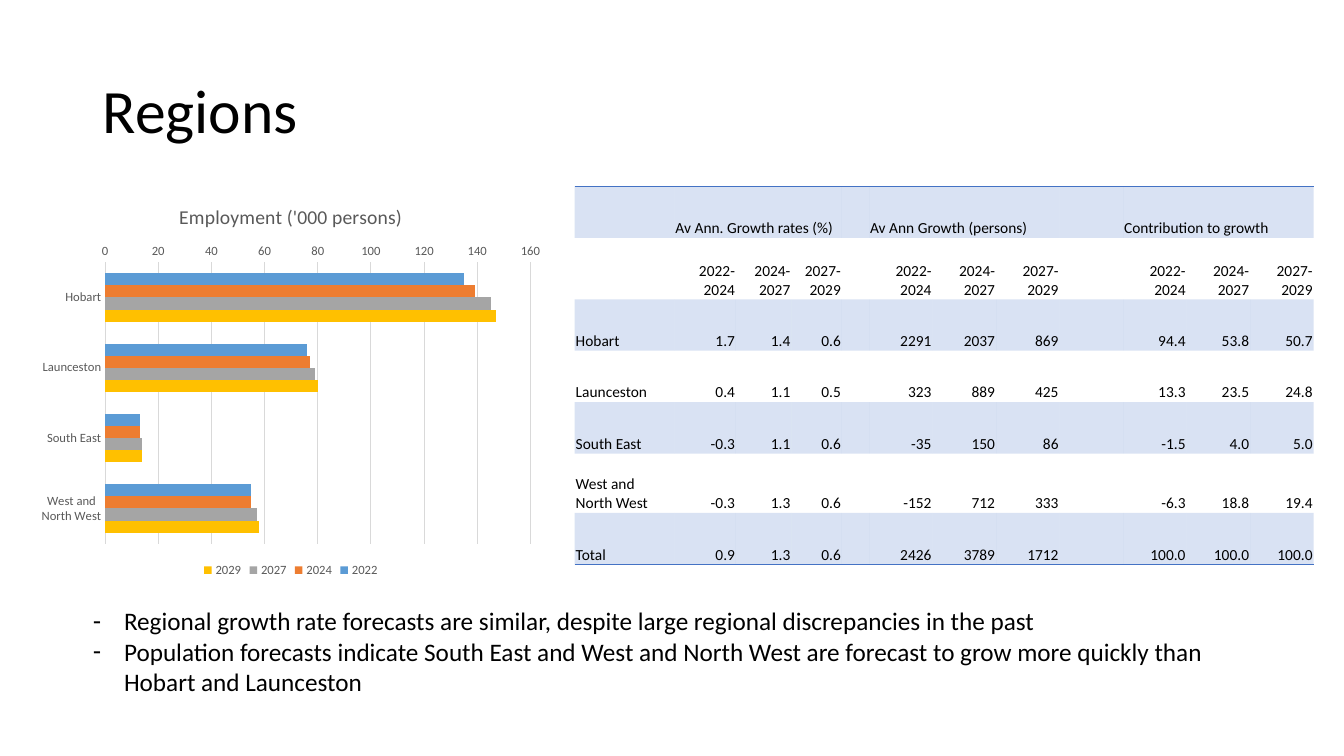
"""Build the Regions slide with an employment chart, a growth table and two findings."""
from dataclasses import dataclass

import lxml.etree
import pptx
import pptx.chart.data
import pptx.dml.color
import pptx.enum.chart
import pptx.enum.text
import pptx.oxml.ns
import pptx.util

Inches = pptx.util.Inches
Pt = pptx.util.Pt
qn = pptx.oxml.ns.qn

FONT = "Calibri"
BLACK, GREY, RULE, ACCENT = "000000", "595959", "D9D9D9", "4472C4"
PLAIN_TABLE_STYLE = "{2D5ABB26-0587-4C30-8999-92F81FD0307C}"


@dataclass
class Area:
    left: float
    top: float
    width: float
    height: float

    def lengths(self) -> tuple:
        return tuple(Inches(n) for n in (self.left, self.top, self.width, self.height))


@dataclass
class Year:
    name: str
    employment: tuple
    color: str


@dataclass
class Region:
    name: str
    rates: tuple
    persons: tuple
    shares: tuple

    def cells(self) -> list:
        return [self.name, *self.rates, "", *self.persons, "", *self.shares]


YEARS = [
    Year("2022", (135, 76, 13, 55), "5B9BD5"),
    Year("2024", (139, 77, 13, 55), "ED7D31"),
    Year("2027", (145, 79, 14, 57), "A5A5A5"),
    Year("2029", (147, 80, 14, 58), "FFC000"),
]
REGIONS = [
    Region("Hobart", ("1.7", "1.4", "0.6"), ("2291", "2037", "869"), ("94.4", "53.8", "50.7")),
    Region("Launceston", ("0.4", "1.1", "0.5"), ("323", "889", "425"), ("13.3", "23.5", "24.8")),
    Region("South East", ("-0.3", "1.1", "0.6"), ("-35", "150", "86"), ("-1.5", "4.0", "5.0")),
    Region("West and North West", ("-0.3", "1.3", "0.6"), ("-152", "712", "333"), ("-6.3", "18.8", "19.4")),
]
TOTAL = Region("Total", ("0.9", "1.3", "0.6"), ("2426", "3789", "1712"), ("100.0",) * 3)
PERIODS = ("2022-2024", "2024-2027", "2027-2029")
MEASURES = {1: "Av Ann. Growth rates (%)", 5: "Av Ann Growth (persons)", 9: "Contribution to growth"}
COLUMN_WIDTHS = [0.99, 0.61, 0.55, 0.5, 0.27] + [0.63] * 7
ROW_HEIGHTS = [0.51, 0.61, 0.51, 0.51, 0.51, 0.59, 0.51]
FINDINGS = [
    "Regional growth rate forecasts are similar, despite large regional discrepancies in the past",
    "Population forecasts indicate South East and West and North West are forecast "
    "to grow more quickly than Hobart and Launceston",
]


def rgb(color: str) -> pptx.dml.color.RGBColor:
    return pptx.dml.color.RGBColor.from_string(color)


def set_font(font, size: float, color: str) -> None:
    font.name = FONT
    font.size = Pt(size)
    font.bold = False
    font.color.rgb = rgb(color)


def place(shape, area: Area) -> None:
    shape.left, shape.top, shape.width, shape.height = area.lengths()


def write_title(box) -> None:
    place(box, Area(0.92, 0.4, 11.5, 1.45))
    box.text_frame.text = "Regions"
    box.text_frame.vertical_anchor = pptx.enum.text.MSO_ANCHOR.MIDDLE
    para = box.text_frame.paragraphs[0]
    para.alignment = pptx.enum.text.PP_ALIGN.LEFT
    para.line_spacing = 0.9
    set_font(para.font, 44, BLACK)


def write_findings(box) -> None:
    place(box, Area(0.82, 5.96, 11.6, 1.01))
    frame = box.text_frame
    frame.text = "\n".join(FINDINGS)
    frame.word_wrap = True
    frame.auto_size = pptx.enum.text.MSO_AUTO_SIZE.SHAPE_TO_FIT_TEXT
    frame.vertical_anchor = pptx.enum.text.MSO_ANCHOR.TOP
    for para in frame.paragraphs:
        para.space_before = Pt(0)
        set_font(para.font, 18, BLACK)
        properties = para._p.get_or_add_pPr()
        properties.set("marL", str(Inches(0.31)))
        properties.set("indent", str(Inches(-0.31)))
        bullet = lxml.etree.Element(qn("a:buChar"), char="-")
        properties.find(qn("a:defRPr")).addprevious(bullet)


def draw_chart(page) -> None:
    data = pptx.chart.data.CategoryChartData(number_format="0")
    data.categories = [region.name for region in REGIONS]
    for year in YEARS:
        data.add_series(year.name, year.employment)
    kind = pptx.enum.chart.XL_CHART_TYPE.BAR_CLUSTERED
    area = Area(0.31, 1.85, 5.15, 3.92)
    chart = page.shapes.add_chart(kind, *area.lengths(), data).chart
    set_font(chart.font, 10, BLACK)
    chart.has_title = True
    chart.chart_title.include_in_layout = False
    chart.chart_title.text_frame.text = "Employment ('000 persons)"
    set_font(chart.chart_title.text_frame.paragraphs[0].font, 14, GREY)
    chart.has_legend = True
    chart.legend.position = pptx.enum.chart.XL_LEGEND_POSITION.BOTTOM
    chart.legend.include_in_layout = False
    set_font(chart.legend.font, 9, GREY)

    plot = chart.plots[0]
    plot.gap_width = 182
    plot.overlap = 0
    plot.vary_by_categories = False
    for series, year in zip(plot.series, YEARS):
        series.format.fill.solid()
        series.format.fill.fore_color.rgb = rgb(year.color)

    regions, persons = chart.category_axis, chart.value_axis
    for axis in (regions, persons):
        axis.major_tick_mark = pptx.enum.chart.XL_TICK_MARK.NONE
        set_font(axis.tick_labels.font, 9, GREY)
    regions.reverse_order = True
    persons.minimum_scale, persons.maximum_scale, persons.major_unit = 0, 160, 20
    persons.format.line.fill.background()
    for line in (regions.format.line, persons.major_gridlines.format.line):
        line.color.rgb = rgb(RULE)
        line.width = Pt(0.75)


def rule_cell(cell, side: str) -> None:
    line = lxml.etree.Element(qn(f"a:{side}"), w=str(Pt(1)))
    fill = lxml.etree.SubElement(line, qn("a:solidFill"))
    lxml.etree.SubElement(fill, qn("a:srgbClr"), val=ACCENT)
    cell._tc.get_or_add_tcPr().insert(0, line)


def format_cell(cell, text: str, right: bool, shaded: bool) -> None:
    cell.text = text
    cell.vertical_anchor = pptx.enum.text.MSO_ANCHOR.BOTTOM
    cell.margin_left = cell.margin_right = cell.margin_top = Inches(0.01)
    cell.margin_bottom = 0
    para = cell.text_frame.paragraphs[0]
    para.alignment = pptx.enum.text.PP_ALIGN.RIGHT if right else pptx.enum.text.PP_ALIGN.LEFT
    set_font(para.font, 11, BLACK)
    if shaded:
        cell.fill.solid()
        cell.fill.fore_color.rgb = rgb(ACCENT)
        color = cell._tc.tcPr.find(qn("a:solidFill")).find(qn("a:srgbClr"))
        lxml.etree.SubElement(color, qn("a:alpha"), val="20000")
    else:
        cell.fill.background()


def draw_table(page) -> None:
    headings = [MEASURES.get(column, "") for column in range(len(COLUMN_WIDTHS))]
    periods = Region("", PERIODS, PERIODS, PERIODS)
    rows = [headings] + [region.cells() for region in (periods, *REGIONS, TOTAL)]
    area = Area(5.7, 1.85, sum(COLUMN_WIDTHS), sum(ROW_HEIGHTS))
    table = page.shapes.add_table(len(rows), len(COLUMN_WIDTHS), *area.lengths()).table
    table._tbl.tblPr.find(qn("a:tableStyleId")).text = PLAIN_TABLE_STYLE
    for column, width in zip(table.columns, COLUMN_WIDTHS):
        column.width = Inches(width)
    for index, (texts, height) in enumerate(zip(rows, ROW_HEIGHTS)):
        table.rows[index].height = Inches(height)
        for column, text in enumerate(texts):
            cell = table.cell(index, column)
            format_cell(cell, text, right=index > 0 and column > 0, shaded=index % 2 == 0)
            if index == 0:
                rule_cell(cell, "lnT")
            elif index == len(rows) - 1:
                rule_cell(cell, "lnB")
    for column in MEASURES:
        table.cell(0, column).merge(table.cell(0, column + 2))


def main() -> None:
    deck = pptx.Presentation()
    deck.slide_width, deck.slide_height = Inches(13.33), Inches(7.5)
    page = deck.slides.add_slide(deck.slide_layouts[1])
    write_title(page.shapes.title)
    draw_chart(page)
    draw_table(page)
    write_findings(page.placeholders[1])
    deck.save("out.pptx")


if __name__ == "__main__":
    main()
